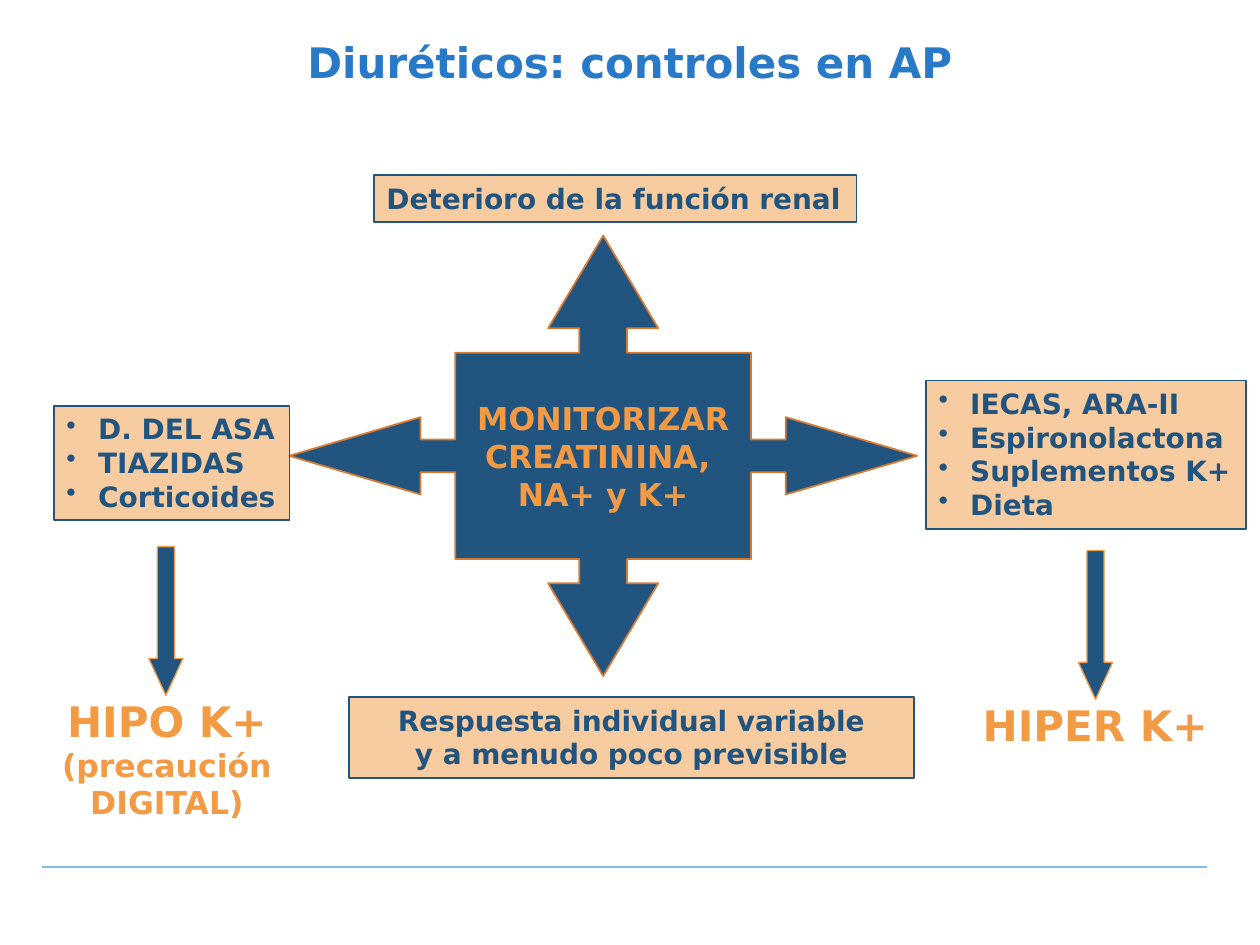
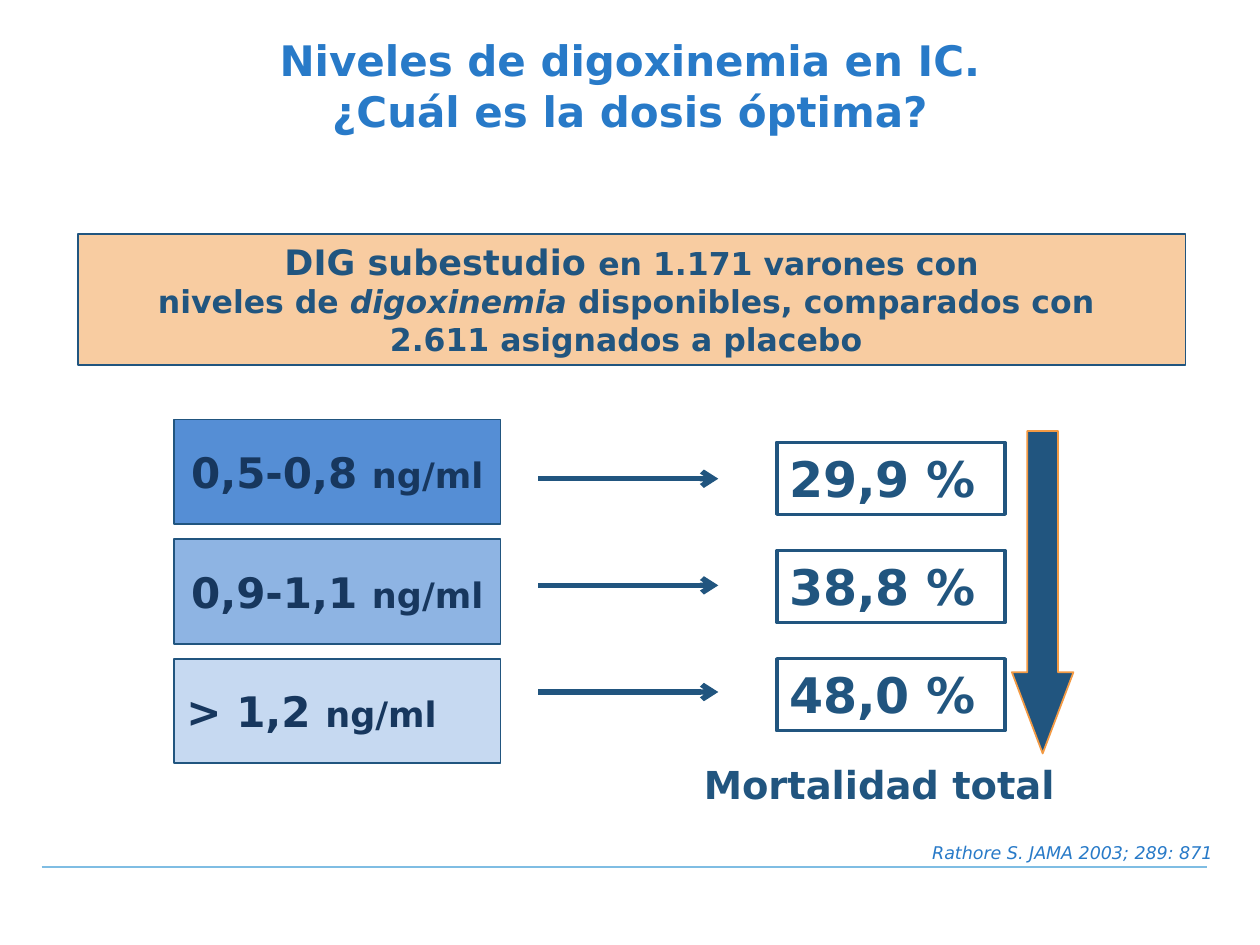
from dataclasses import dataclass
from typing import NamedTuple, Optional, Sequence, Union

import pptx
import pptx.dml.color
import pptx.enum.shapes
import pptx.enum.text
import pptx.oxml.ns
import pptx.util
from lxml import etree

Cm = pptx.util.Cm
Align = pptx.enum.text.PP_ALIGN
Anchor = pptx.enum.text.MSO_ANCHOR
Preset = pptx.enum.shapes.MSO_SHAPE
qn = pptx.oxml.ns.qn


# Theme
@dataclass(frozen=True)
class Theme:
    font: str = "DejaVu Sans"
    navy: str = "21557F"
    deep: str = "17375E"
    blue: str = "287AC8"
    orange: str = "F39A44"
    rust: str = "D97A33"
    rule: str = "7FBDE3"
    levels: tuple = ("558ED5", "8EB4E3", "C6D9F1")
    citation_size: int = 10
    label_size: int = 16
    body_size: int = 18
    lead_size: int = 20
    caption_size: int = 22
    title_size: int = 24
    value_size: int = 28


THEME = Theme()


class Box(NamedTuple):
    """Left, top, width and height in centimetres."""
    left: float
    top: float
    width: float
    height: float

    def emu(self) -> tuple:
        return tuple(Cm(length) for length in self)


class Run(NamedTuple):
    text: str
    size: Optional[int] = None
    italic: Optional[bool] = None


Paragraph = Union[str, Sequence[Run]]


class Label(NamedTuple):
    box: Box
    lines: Sequence[Paragraph]
    align: Align = Align.LEFT
    wrap: bool = False
    bullets: bool = False
    size: int = THEME.label_size


class Level(NamedTuple):
    dose: str
    mortality: str
    align: Align


# Drawing helpers
def rgb(code: str):
    return pptx.dml.color.RGBColor.from_string(code)


def add_bullet(paragraph, color: str) -> None:
    props = paragraph._p.get_or_add_pPr()
    props.set("marL", str(Cm(0.64)))
    props.set("indent", str(-Cm(0.64)))
    bullet_color = etree.SubElement(props, qn("a:buClr"))
    etree.SubElement(bullet_color, qn("a:srgbClr"), val=color)
    etree.SubElement(props, qn("a:buChar"), char="•")


def write(shape, lines: Sequence[Paragraph], *, size: int, color: str,
          bold: bool = True, italic: bool = False, align=Align.CENTER,
          anchor=Anchor.TOP, wrap: bool = True, grow: bool = False,
          bullets: bool = False) -> None:
    frame = shape.text_frame
    frame.word_wrap = wrap
    frame.vertical_anchor = anchor
    if grow:
        frame.auto_size = pptx.enum.text.MSO_AUTO_SIZE.SHAPE_TO_FIT_TEXT
    for index, line in enumerate(lines):
        paragraph = frame.add_paragraph() if index else frame.paragraphs[0]
        paragraph.alignment = align
        if bullets:
            add_bullet(paragraph, color)
        for part in [Run(line)] if isinstance(line, str) else line:
            run = paragraph.add_run()
            run.text = part.text
            run.font.name = THEME.font
            run.font.size = pptx.util.Pt(part.size or size)
            run.font.bold = bold
            run.font.italic = italic if part.italic is None else part.italic
            run.font.color.rgb = rgb(color)


def paint(shape, *, fill: Optional[str], line: str, width: float = 1,
          opacity: Optional[int] = None):
    shape.shadow.inherit = False
    if fill:
        shape.fill.solid()
        shape.fill.fore_color.rgb = rgb(fill)
    else:
        shape.fill.background()
    if opacity:
        color = shape._element.spPr.find(qn("a:solidFill")).find(qn("a:srgbClr"))
        etree.SubElement(color, qn("a:alpha"), val=str(opacity * 1000))
    shape.line.color.rgb = rgb(line)
    shape.line.width = pptx.util.Pt(width)
    return shape


def add_rect(slide, box: Box, **style):
    return paint(slide.shapes.add_shape(Preset.RECTANGLE, *box.emu()), **style)


def add_text(slide, box: Box, lines: Sequence[Paragraph], **style) -> None:
    write(slide.shapes.add_textbox(*box.emu()), lines, **style)


def add_label(slide, label: Label) -> None:
    panel = add_rect(slide, label.box, fill=THEME.orange, line=THEME.navy,
                     opacity=50)
    write(panel, label.lines, size=label.size, color=THEME.navy,
          align=label.align, wrap=label.wrap, grow=True, bullets=label.bullets)


def add_down_arrow(slide, box: Box, head: float, width: float) -> None:
    arrow = slide.shapes.add_shape(Preset.DOWN_ARROW, *box.emu())
    arrow.adjustments[0] = 0.5
    arrow.adjustments[1] = head
    paint(arrow, fill=THEME.navy, line=THEME.orange, width=width)


def add_line(slide, left: float, right: float, y: float, color: str,
             width: float, arrow: bool = False) -> None:
    line = slide.shapes.add_connector(
        pptx.enum.shapes.MSO_CONNECTOR.STRAIGHT, Cm(left), Cm(y), Cm(right), Cm(y))
    line.line.color.rgb = rgb(color)
    line.line.width = pptx.util.Pt(width)
    if arrow:
        etree.SubElement(line.line._get_or_add_ln(), qn("a:tailEnd"), type="arrow")
    etree.SubElement(line._element.spPr, qn("a:effectLst"))


def new_slide(deck, title: Sequence[str], title_top: float):
    slide = deck.slides.add_slide(deck.slide_layouts[6])
    add_line(slide, 0.84, 24.33, 17.48, THEME.rule, 0.75)
    add_text(slide, Box(0, title_top, 25.4, 1.65), title, size=THEME.title_size,
             color=THEME.blue, anchor=Anchor.MIDDLE)
    return slide


# Slide 1: what to monitor
def add_monitor_cross(slide) -> None:
    center_x, center_y = 12.16, 9.19
    # Outline of the upper right quarter, from the top tip to the right tip
    quarter = [(0, -4.44), (1.11, -2.57), (0.48, -2.57), (0.48, -2.08),
               (2.98, -2.08), (2.98, -0.33), (3.68, -0.33), (3.68, -0.78),
               (6.33, 0)]
    right = quarter + [(x, -y) for x, y in reversed(quarter[:-1])]
    outline = right + [(-x, y) for x, y in reversed(right[1:-1])]
    points = [(Cm(center_x + x), Cm(center_y + y)) for x, y in outline]
    builder = slide.shapes.build_freeform(*points[0])
    builder.add_line_segments(points[1:], close=True)
    cross = paint(builder.convert_to_shape(), fill=THEME.navy, line=THEME.rust)
    write(cross, ["MONITORIZAR", "CREATININA, ", "NA+ y K+"],
          size=THEME.body_size, color=THEME.orange, anchor=Anchor.MIDDLE,
          wrap=False)


def build_controls(deck) -> None:
    slide = new_slide(deck, ["Diuréticos: controles en AP"], 0.41)
    add_monitor_cross(slide)
    factors = [
        Label(Box(7.54, 3.53, 9.73, 0.94), ["Deterioro de la función renal"]),
        Label(Box(18.67, 7.67, 6.45, 3.0),
              ["IECAS, ARA-II", "Espironolactona", "Suplementos K+", "Dieta"],
              bullets=True),
        Label(Box(7.04, 14.05, 11.38, 1.63),
              ["Respuesta individual variable", "y a menudo poco previsible"],
              align=Align.CENTER, wrap=True),
        Label(Box(1.09, 8.18, 4.75, 2.31),
              ["D. DEL ASA", "TIAZIDAS", "Corticoides"], bullets=True),
    ]
    for factor in factors:
        add_label(slide, factor)

    # Potassium outcomes
    note = THEME.body_size
    outcomes = [
        (Box(21.74, 11.1, 0.69, 3.0), Box(19.56, 13.97, 5.33, 1.3),
         ["HIPER K+"], Align.LEFT),
        (Box(3.0, 11.02, 0.69, 3.0), Box(0.89, 13.89, 4.95, 2.82),
         ["HIPO K+", [Run("(precaución", note)], [Run("DIGITAL)", note)]],
         Align.CENTER),
    ]
    for arrow_box, text_box, lines, align in outcomes:
        add_down_arrow(slide, arrow_box, head=1.08, width=0.75)
        add_text(slide, text_box, lines, size=THEME.title_size,
                 color=THEME.orange, align=align, grow=True)


# Slide 2: digoxin levels and mortality
def build_digoxin(deck) -> None:
    slide = new_slide(
        deck, ["Niveles de digoxinemia en IC.", "¿Cuál es la dosis óptima?"], 0.89)
    add_label(slide, Label(
        Box(1.57, 4.72, 22.33, 2.64),
        [[Run("DIG subestudio ", THEME.lead_size), Run("en 1.171 varones con")],
         [Run("niveles de "), Run("digoxinemia", italic=True),
          Run(" disponibles, comparados con ")],
         "2.611 asignados a placebo "],
        align=Align.CENTER, wrap=True, size=THEME.body_size))

    levels = [
        Level("0,5-0,8 ", "29,9 %", Align.CENTER),
        Level("0,9-1,1 ", "38,8 %", Align.CENTER),
        Level("> 1,2 ", "48,0 %", Align.LEFT),
    ]
    for row, (level, tint) in enumerate(zip(levels, THEME.levels)):
        dose = add_rect(slide, Box(3.51, 8.46 + 2.41 * row, 6.58, 2.11),
                        fill=tint, line=THEME.navy)
        write(dose, [[Run(level.dose), Run("ng/ml", THEME.lead_size)]],
              size=THEME.title_size, color=THEME.deep, align=level.align,
              anchor=Anchor.MIDDLE, wrap=level.align == Align.LEFT)
        add_line(slide, 10.85, 14.48, 9.65 + 2.15 * row, THEME.navy, 3, arrow=True)
        mortality = add_rect(slide, Box(15.66, 8.92 + 2.18 * row, 4.6, 1.45),
                             fill=None, line=THEME.navy, width=2)
        write(mortality, [level.mortality], size=THEME.value_size,
              color=THEME.navy, align=Align.LEFT)

    add_down_arrow(slide, Box(20.4, 8.69, 1.24, 6.5), head=1.32, width=1)
    add_text(slide, Box(13.94, 15.21, 10.16, 1.19), ["Mortalidad total"],
             size=THEME.caption_size, color=THEME.navy, align=Align.LEFT, grow=True)
    add_text(slide, Box(1.78, 16.84, 22.91, 0.69),
             ["Rathore S. JAMA 2003; 289: 871"], size=THEME.citation_size,
             color=THEME.blue, bold=False, italic=True, align=Align.RIGHT, grow=True)


def main() -> None:
    deck = pptx.Presentation()
    deck.slide_width, deck.slide_height = Cm(25.4), Cm(19.05)
    build_controls(deck)
    build_digoxin(deck)
    deck.save("out.pptx")


if __name__ == "__main__":
    main()
